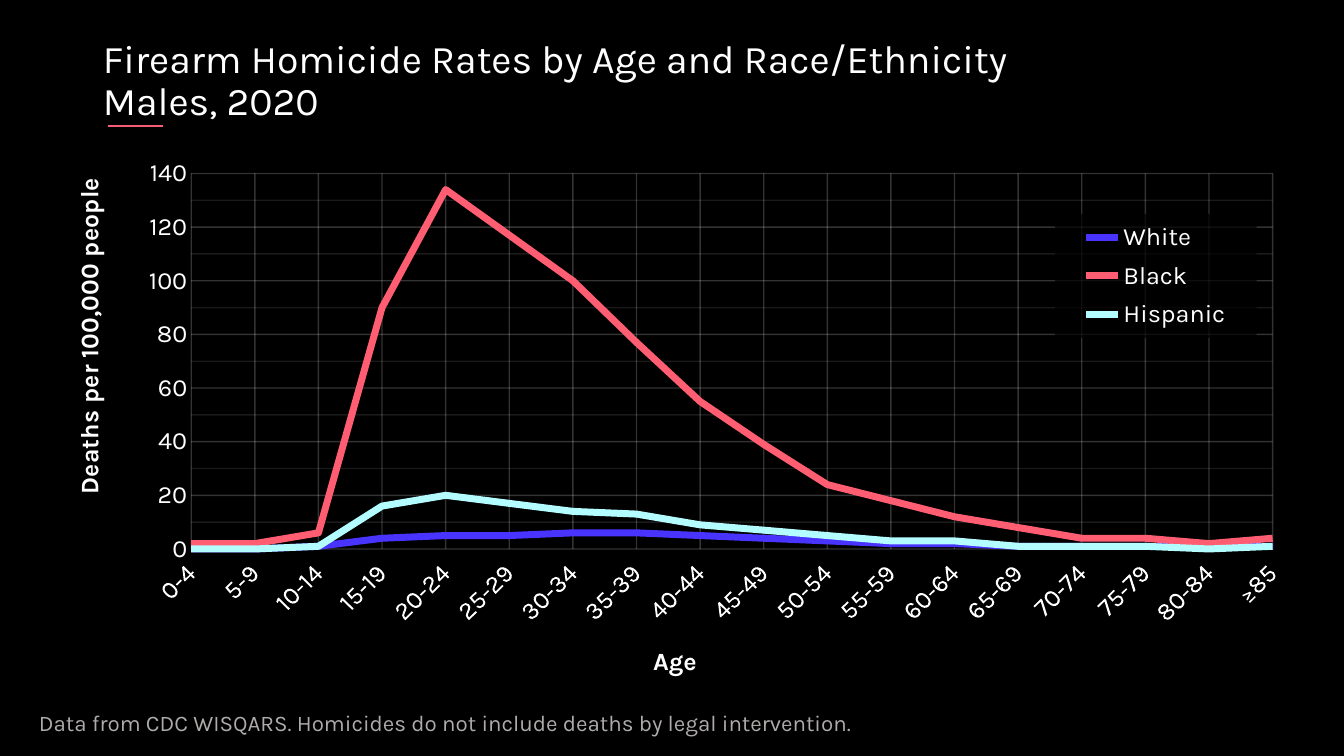
"""Build the slide on firearm homicide rates by age and race/ethnicity."""
from dataclasses import dataclass

import pptx
import pptx.chart.data
import pptx.dml.color
import pptx.enum.chart
import pptx.enum.shapes
import pptx.enum.text
import pptx.oxml
import pptx.oxml.ns
import pptx.util

EMU_PER_PX = 914400 / 100.8
FONT = "Karla"
BLACK = pptx.dml.color.RGBColor(0x00, 0x00, 0x00)
WHITE = pptx.dml.color.RGBColor(0xFF, 0xFF, 0xFF)
GRAY = pptx.dml.color.RGBColor(0xAF, 0xAB, 0xAB)
ROSE = pptx.dml.color.RGBColor(0xF8, 0x5B, 0x75)
BLUE = pptx.dml.color.RGBColor(0x49, 0x33, 0xFE)
RED = pptx.dml.color.RGBColor(0xFF, 0x5D, 0x71)
CYAN = pptx.dml.color.RGBColor(0xB3, 0xFC, 0xFF)
AGES = [f"{a}-{a + 4}" for a in range(0, 85, 5)] + ["≥85"]


@dataclass(frozen=True)
class Box:
    x: int
    y: int
    w: int
    h: int


@dataclass(frozen=True)
class TextItem:
    box: Box
    lines: tuple[str, ...]
    size: int
    color: pptx.dml.color.RGBColor
    anchor: pptx.enum.text.MSO_ANCHOR


@dataclass(frozen=True)
class Group:
    name: str
    color: pptx.dml.color.RGBColor
    rates: tuple[int, ...]


CHART_BOX = Box(54, 158, 1236, 526)
PLOT_BOX = Box(191, 174, 1082, 382)
LEGEND_BOX = Box(1055, 215, 201, 126)
TEXTS = (
    TextItem(Box(29, 707, 986, 42),
             ("Data from CDC WISQARS. Homicides do not include deaths by legal intervention.",),
             16, GRAY, pptx.enum.text.MSO_ANCHOR.TOP),
    TextItem(Box(93, 37, 1159, 89),
             ("Firearm Homicide Rates by Age and Race/Ethnicity", "Males, 2020"),
             28, WHITE, pptx.enum.text.MSO_ANCHOR.MIDDLE),
)
GROUPS = (
    Group("White", BLUE, (0, 0, 1, 4, 5, 5, 6, 6, 5, 4, 3, 2, 2, 1, 1, 1, 1, 1)),
    Group("Black", RED, (2, 2, 6, 90, 134, 117, 100, 77, 55, 39, 24, 18, 12, 8, 4, 4, 2, 4)),
    Group("Hispanic", CYAN, (0, 0, 1, 16, 20, 17, 14, 13, 9, 7, 5, 3, 3, 1, 1, 1, 0, 1)),
)


def px(n: int) -> pptx.util.Emu:
    return pptx.util.Emu(round(n * EMU_PER_PX))


def bounds(box: Box) -> tuple[pptx.util.Emu, ...]:
    return px(box.x), px(box.y), px(box.w), px(box.h)


def qn(tag: str) -> str:
    return pptx.oxml.ns.qn(tag)


def xml(tag: str, body: str = "", attrs: str = ""):
    ns = pptx.oxml.ns.nsdecls("c", "a")
    return pptx.oxml.parse_xml(f"<{tag} {ns} {attrs}>{body}</{tag}>")


def solid_fill(color: pptx.dml.color.RGBColor, opacity: int) -> str:
    alpha = f'<a:alpha val="{opacity * 1000}"/>'
    return f'<a:solidFill><a:srgbClr val="{color}">{alpha}</a:srgbClr></a:solidFill>'


def style(font, size: int, color: pptx.dml.color.RGBColor, bold: bool = False) -> None:
    font.name, font.size, font.bold = FONT, pptx.util.Pt(size), bold
    font.color.rgb = color


def add_text(s, item: TextItem) -> None:
    tf = s.shapes.add_textbox(*bounds(item.box)).text_frame
    tf.word_wrap = True
    tf.vertical_anchor = item.anchor
    p = tf.paragraphs[0]
    p.line_spacing = 0.9
    for i, line in enumerate(item.lines):
        if i:
            p.add_line_break()
        r = p.add_run()
        r.text = line
        style(r.font, item.size, item.color)


def add_rule(s) -> None:
    line = s.shapes.add_connector(pptx.enum.shapes.MSO_CONNECTOR.STRAIGHT,
                                  px(108), px(126), px(163), px(126))
    line.line.color.rgb = ROSE
    line.line.width = pptx.util.Pt(1.25)
    line.element.spPr.append(xml("a:effectLst"))


def lay_out(parent, box: Box, after: str = "", sized: bool = True) -> None:
    for old in parent.findall(qn("c:layout")):
        parent.remove(old)
    fractions = {"x": (box.x - CHART_BOX.x) / CHART_BOX.w,
                 "y": (box.y - CHART_BOX.y) / CHART_BOX.h}
    if sized:
        fractions |= {"w": box.w / CHART_BOX.w, "h": box.h / CHART_BOX.h}
    target = '<c:layoutTarget val="inner"/>' if not after else ""
    modes = '<c:xMode val="edge"/><c:yMode val="edge"/>'
    values = "".join(f'<c:{k} val="{v:.3f}"/>' for k, v in fractions.items())
    layout = xml("c:layout", f"<c:manualLayout>{target}{modes}{values}</c:manualLayout>")
    if after:
        parent.find(qn(after)).addnext(layout)
    else:
        parent.insert(0, layout)


def style_axis(axis, title: str, title_box: Box, title_turn: int) -> None:
    none = pptx.enum.chart.XL_TICK_MARK.NONE
    axis.major_tick_mark = axis.minor_tick_mark = none
    axis.format.line.fill.background()
    axis.has_major_gridlines = True
    style(axis.tick_labels.font, 18, WHITE)
    tf = axis.axis_title.text_frame
    r = tf.paragraphs[0].add_run()
    r.text = title
    style(r.font, 18, WHITE, True)
    el = axis.axis_title.element
    body = el.find(".//" + qn("a:bodyPr"))
    body.set("rot", str(title_turn * 60000))
    body.set("vert", "horz")
    lay_out(el, title_box, "c:tx", sized=False)


def style_grid(chart, tag: str, opacity: int) -> None:
    line = f'<a:ln w="{pptx.util.Pt(1)}">{solid_fill(WHITE, opacity)}</a:ln>'
    for gridlines in chart.element.iter(qn(tag)):
        gridlines.append(xml("c:spPr", line))


def style_legend(chart) -> None:
    chart.has_legend = True
    legend = chart.legend
    legend.position = pptx.enum.chart.XL_LEGEND_POSITION.TOP
    legend.include_in_layout = False
    style(legend.font, 18, WHITE)
    el = chart.element.find(".//" + qn("c:legend"))
    lay_out(el, LEGEND_BOX, "c:legendPos")
    el.find(qn("c:overlay")).addnext(xml("c:spPr", solid_fill(BLACK, 70)))


def add_rates_chart(s) -> None:
    data = pptx.chart.data.CategoryChartData()
    data.categories = AGES
    for group in GROUPS:
        data.add_series(group.name, group.rates)
    chart = s.shapes.add_chart(pptx.enum.chart.XL_CHART_TYPE.LINE,
                               *bounds(CHART_BOX), data).chart
    chart.has_title = False
    style(chart.font, 18, WHITE)
    for group, series in zip(GROUPS, chart.plots[0].series):
        series.smooth = False
        series.marker.style = pptx.enum.chart.XL_MARKER_STYLE.NONE
        series.format.line.color.rgb = group.color
        series.format.line.width = pptx.util.Pt(5)
    chart.plots[0].vary_by_categories = False

    ages, rates = chart.category_axis, chart.value_axis
    style_axis(ages, "Age", Box(649, 648, 0, 0), 0)
    style_axis(rates, "Deaths per 100,000 people", Box(68, 179, 0, 0), -90)
    ages.tick_label_position = pptx.enum.chart.XL_TICK_LABEL_POSITION.LOW
    chart.element.find(f".//{qn('c:catAx')}/{qn('c:txPr')}/{qn('a:bodyPr')}").set("rot", "-2700000")
    rates.minimum_scale, rates.maximum_scale = 0, 140
    rates.major_unit, rates.minor_unit = 20, 10
    rates.has_minor_gridlines = True
    style_grid(chart, "c:majorGridlines", 20)
    style_grid(chart, "c:minorGridlines", 10)

    val_ax = chart.element.find(".//" + qn("c:valAx"))
    for old in val_ax.findall(qn("c:crossBetween")):
        val_ax.remove(old)
    val_ax.find(qn("c:crosses")).addnext(xml("c:crossBetween", attrs='val="midCat"'))
    lay_out(chart.element.find(".//" + qn("c:plotArea")), PLOT_BOX)
    style_legend(chart)


def main() -> None:
    prs = pptx.Presentation()
    prs.slide_width, prs.slide_height = px(1344), px(756)
    s = prs.slides.add_slide(prs.slide_layouts[6])
    s.background.fill.solid()
    s.background.fill.fore_color.rgb = BLACK
    add_rule(s)
    add_rates_chart(s)
    for item in TEXTS:
        add_text(s, item)
    prs.save("out.pptx")


if __name__ == "__main__":
    main()
